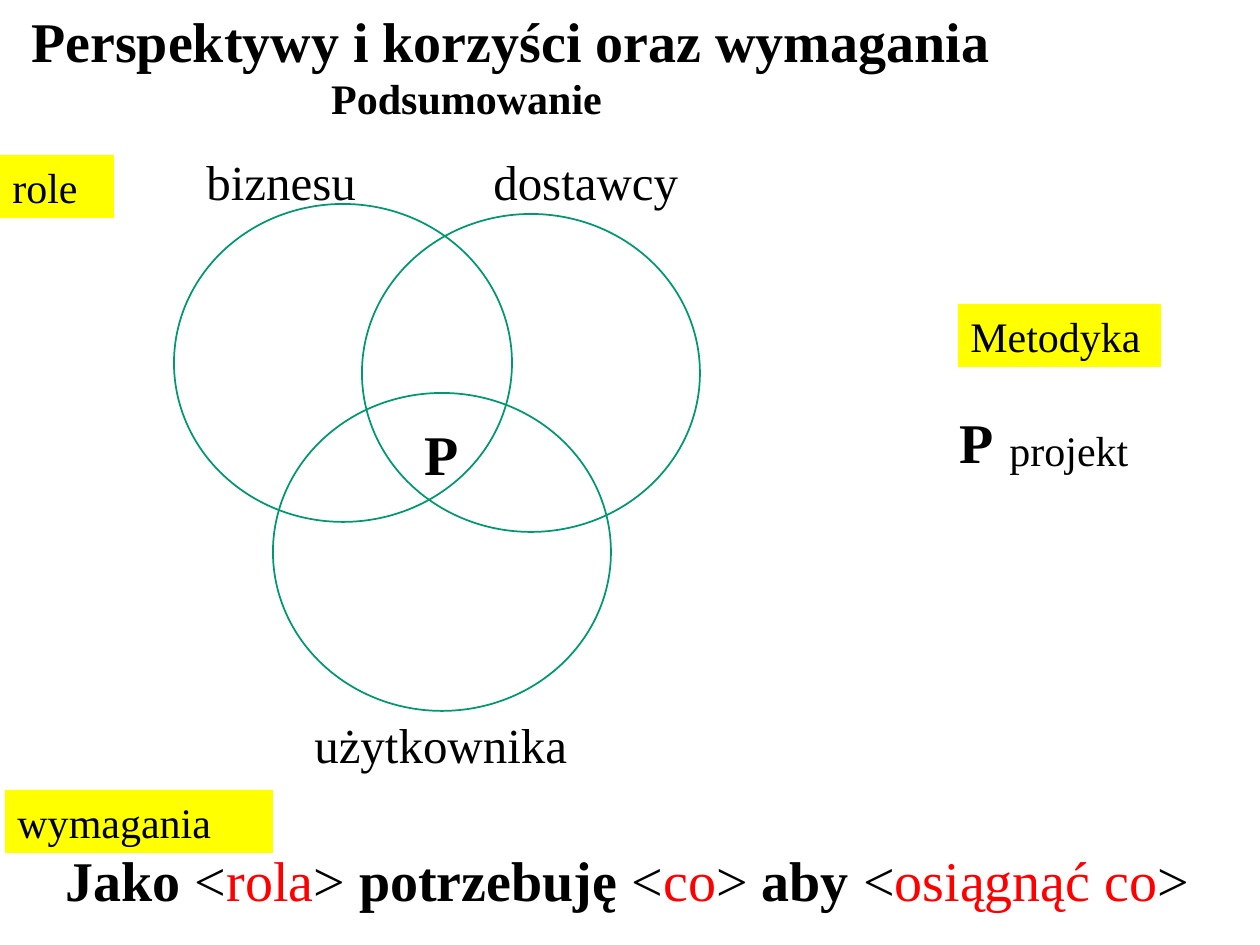
import pptx
import pptx.dml.color
import pptx.enum.shapes
import pptx.enum.text
import pptx.util

BLACK = pptx.dml.color.RGBColor(0x00, 0x00, 0x00)
RED = pptx.dml.color.RGBColor(0xFF, 0x00, 0x00)
YELLOW = pptx.dml.color.RGBColor(0xFF, 0xFF, 0x00)
GREEN = pptx.dml.color.RGBColor(0x00, 0x97, 0x71)
FONT = "Times New Roman"
LEFT = pptx.enum.text.PP_ALIGN.LEFT
CENTER = pptx.enum.text.PP_ALIGN.CENTER
EMU_PER_PX = 914400 / 126


def px(*lengths):
    return [pptx.util.Emu(round(length * EMU_PER_PX)) for length in lengths]


def write(box, spans, size, align=LEFT):
    """Fill a box with one paragraph of (text, bold, colour) spans."""
    frame = box.text_frame
    frame.word_wrap = True
    frame.auto_size = pptx.enum.text.MSO_AUTO_SIZE.NONE
    para = frame.paragraphs[0]
    para.alignment = align
    for text, bold, colour in spans:
        span = para.add_run()
        span.text = text
        formats = {"name": FONT, "size": pptx.util.Pt(size), "bold": bold}
        for name, value in formats.items():
            setattr(span.font, name, value)
        span.font.color.rgb = colour


deck = pptx.Presentation()
deck.slide_width, deck.slide_height = px(1260, 945)
page = deck.slides.add_slide(deck.slide_layouts[5])

# Title
title = page.shapes.title
title.left, title.top, title.width, title.height = px(5, -4, 1012, 89)
title.text_frame.vertical_anchor = pptx.enum.text.MSO_ANCHOR.MIDDLE
write(title, [("Perspektywy i korzyści oraz wymagania", True, BLACK)], 32, CENTER)

# Three overlapping circles, one for each role
for left, top in [(174, 204), (362, 214), (273, 393)]:
    circle = page.shapes.add_shape(
        pptx.enum.shapes.MSO_SHAPE.OVAL, *px(left, top, 338, 318))
    circle.shadow.inherit = False
    circle.fill.background()
    circle.line.color.rgb = GREEN
    circle.line.width = pptx.util.Pt(1)

# Labels: text, left, top, width, height, size, bold, alignment
labels = [
    ("Podsumowanie", 263, 66, 407, 63, 24, True, CENTER),
    ("biznesu", 194, 145, 228, 72, 28, False, LEFT),
    ("dostawcy", 481, 145, 228, 72, 28, False, LEFT),
    ("użytkownika", 302, 708, 287, 72, 28, False, LEFT),
    ("P", 412, 413, 59, 81, 32, True, LEFT),
    ("P", 947, 401, 59, 81, 32, True, LEFT),
    ("projekt", 997, 418, 248, 63, 24, False, LEFT),
]
for text, left, top, width, height, size, bold, align in labels:
    box = page.shapes.add_textbox(*px(left, top, width, height))
    write(box, [(text, bold, BLACK)], size, align)

# Yellow tags
for text, left, top, width in [
    ("role", 0, 155, 114),
    ("Metodyka", 958, 304, 203),
    ("wymagania", 5, 790, 268),
]:
    tag = page.shapes.add_textbox(*px(left, top, width, 63))
    tag.fill.solid()
    tag.fill.fore_color.rgb = YELLOW
    write(tag, [(text, False, BLACK)], 24)

# User story pattern: bold words, each followed by a red slot in brackets
story = []
for words, slot, closing in [
    ("Jako ", "rola", "> "),
    ("potrzebuję ", "co", "> "),
    ("aby ", "osiągnąć co", ">"),
]:
    story += [(words, True, BLACK), ("<", False, BLACK),
              (slot, False, RED), (closing, False, BLACK)]
sentence = page.shapes.add_textbox(*px(15, 839, 1225, 81))
write(sentence, story, 32, CENTER)

deck.save("out.pptx")
